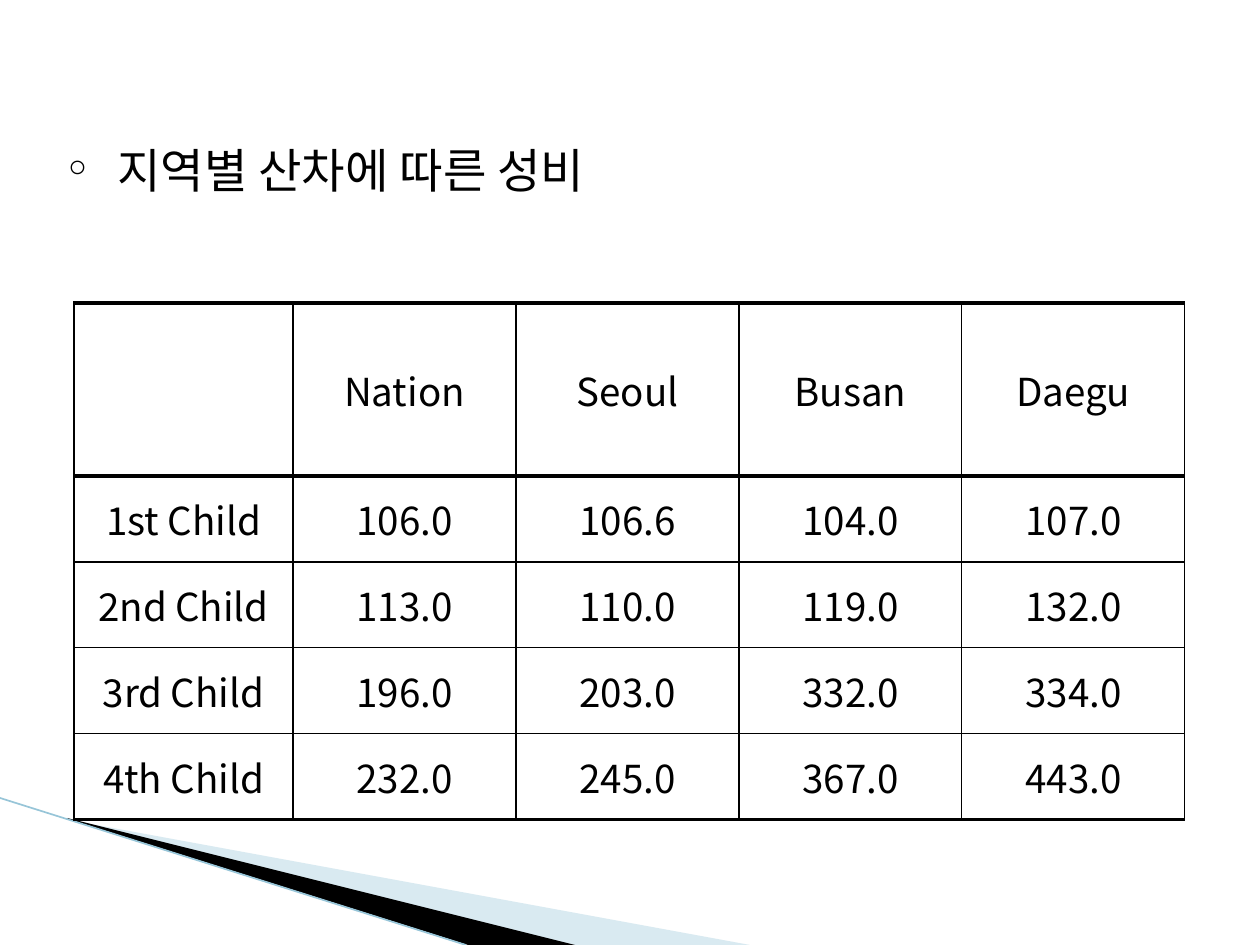
from lxml.etree import SubElement as Sub
from pptx import Presentation
from pptx.dml.color import RGBColor as RGB
from pptx.enum.shapes import MSO_CONNECTOR as Link
from pptx.enum.text import MSO_ANCHOR as Anchor, PP_ALIGN as Align
from pptx.oxml import parse_xml
from pptx.oxml.ns import nsdecls, qn
from pptx.util import Pt

SCALE = 914400 / 126
BLACK = RGB(0x00, 0x00, 0x00)
PALE = RGB(0xA0, 0xCB, 0xDC)
SKY = RGB(0x97, 0xC5, 0xD8)
THIN, THICK = 0.75, 2
ROWS = [
    ("", "Nation", "Seoul", "Busan", "Daegu"),
    ("1st Child", "106.0", "106.6", "104.0", "107.0"),
    ("2nd Child", "113.0", "110.0", "119.0", "132.0"),
    ("3rd Child", "196.0", "203.0", "332.0", "334.0"),
    ("4th Child", "232.0", "245.0", "367.0", "443.0"),
]


def px(*vals):
    return [round(v * SCALE) for v in vals]


class Deck:
    """Holds the text style and the current slide, and draws each kind of element."""

    face = "Noto Sans CJK KR"
    mark = "DejaVu Sans Mono"

    def __init__(self, wide, high):
        self.prs = Presentation()
        self.prs.slide_width, self.prs.slide_height = px(wide, high)
        self.slide = self.prs.slides.add_slide(self.prs.slide_layouts[6])
        self.shapes = self.slide.shapes

    def label(self, para, text, size):
        run = para.add_run()
        run.text = text
        for key, val in {"size": Pt(size), "name": self.face}.items():
            setattr(run.font, key, val)
        run.font.color.rgb = BLACK
        Sub(run._r.get_or_add_rPr(), qn("a:ea"), typeface=self.face)

    def wedge(self, points, color, alpha=100):
        pen = self.shapes.build_freeform(*points[0], scale=SCALE)
        pen.add_line_segments(points[1:], close=True)
        shape = pen.convert_to_shape()
        shape.shadow.inherit = False
        shape.line.fill.background()
        shape.fill.solid()
        shape.fill.fore_color.rgb = color
        if alpha < 100:
            tone = shape._element.spPr.find(".//" + qn("a:srgbClr"))
            Sub(tone, qn("a:alpha"), val=str(alpha * 1000))

    def line(self, start, end, color, width):
        rule = self.shapes.add_connector(Link.STRAIGHT, *px(*start, *end))
        rule.line.color.rgb = color
        rule.line.width = Pt(width)
        Sub(rule._element.spPr, qn("a:effectLst"))

    def bullet(self, box, text, size, left, hang):
        frame = self.shapes.add_textbox(*px(*box)).text_frame
        frame.word_wrap = True
        para = frame.paragraphs[0]
        props = para._p.get_or_add_pPr()
        for key, val in zip(("marL", "indent"), px(left, -hang)):
            props.set(key, str(val))
        Sub(props, qn("a:buFont"), typeface=self.mark)
        Sub(props, qn("a:buChar"), char="◦")
        self.label(para, text, size)

    def edges(self, cell, widths):
        props = cell._tc.get_or_add_tcPr()
        for spot, (side, width) in enumerate(widths.items()):
            props.insert(spot, parse_xml(
                f'<a:ln{side} {nsdecls("a")} w="{int(Pt(width))}"><a:solidFill>'
                f'<a:srgbClr val="{BLACK}"/></a:solidFill></a:ln{side}>'))

    def table(self, left, top, cols, highs, rows, size):
        box = px(left, top, sum(cols), sum(highs))
        grid = self.shapes.add_table(len(rows), len(cols), *box).table
        grid.first_row = grid.horz_banding = False
        for col, wide in zip(grid.columns, px(*cols)):
            col.width = wide
        for row, high in zip(grid.rows, px(*highs)):
            row.height = high
        rules = [THICK, THICK] + [THIN] * (len(rows) - 2) + [THICK]
        for r, row in enumerate(rows):
            for c, text in enumerate(row):
                cell = grid.cell(r, c)
                cell.fill.background()
                cell.vertical_anchor = Anchor.MIDDLE
                self.edges(cell, {"L": THIN, "R": THIN, "T": rules[r], "B": rules[r + 1]})
                para = cell.text_frame.paragraphs[0]
                para.alignment = Align.CENTER
                if text:
                    self.label(para, text, size)


def main():
    deck = Deck(1260, 945)
    deck.wedge([(69, 820), (750, 945), (574, 945), (69, 819)], PALE, 40)
    deck.wedge([(67, 818), (575, 945), (468, 945), (68, 819)], BLACK)
    deck.line((0, 798), (466, 945), SKY, 0.95)
    deck.table(74, 303, [219] + [223] * 4, [173] + [86] * 4, ROWS, 22)
    deck.bullet((0, 135, 1092, 669), "지역별 산차에 따른 성비", 27, 105, 54)
    deck.prs.save("out.pptx")


if __name__ == "__main__":
    main()
